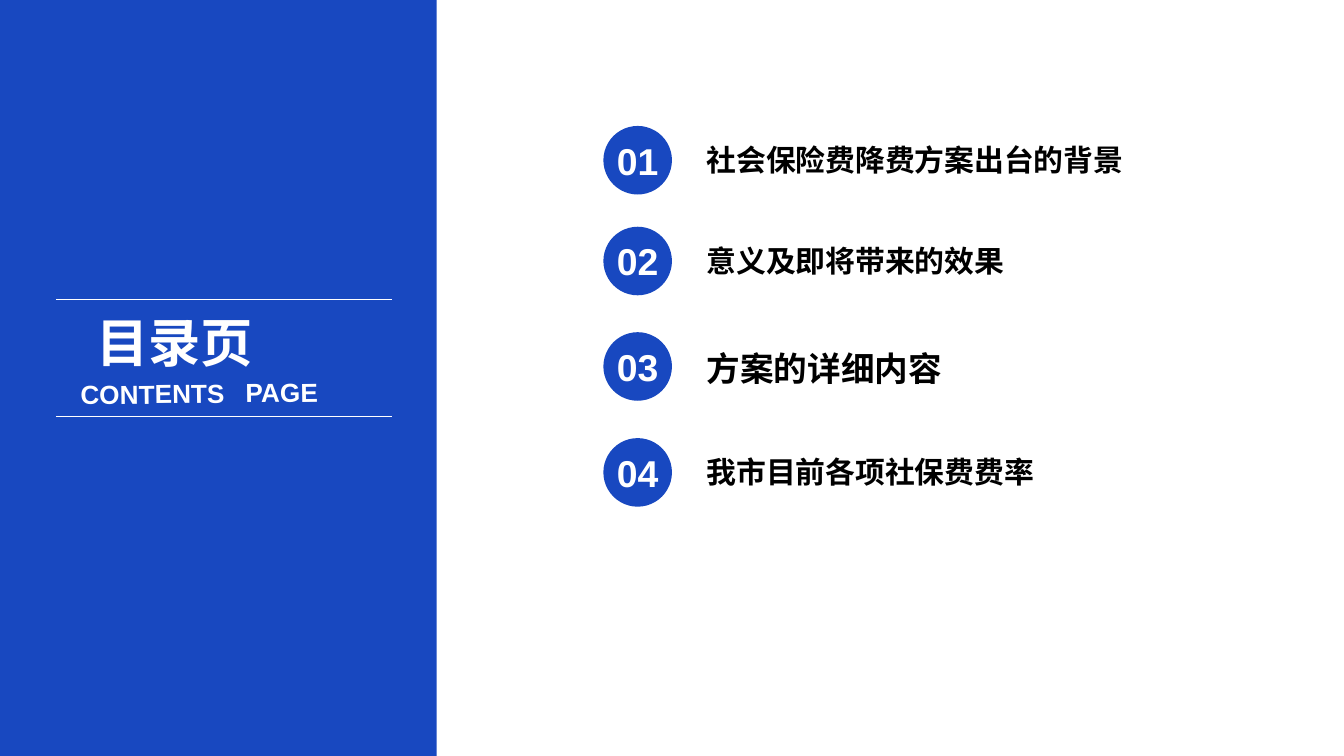
from pptx import Presentation
from pptx import util as u
from pptx.dml.color import RGBColor
from pptx.enum import shapes, text
from pptx.oxml.ns import qn
from lxml import etree

COLORS = {"blue": "1848C0", "white": "FFFFFF", "black": "000000"}
CJK, LATIN = "Noto Sans CJK SC", "Arial"
TITLE = "目录页"
SUBTITLE = "CONTENTS\tPAGE"
ENTRIES = [
    ("01", "社会保险费降费方案出台的背景", 16, 67.5),
    ("02", "意义及即将带来的效果", 16, 121.5),
    ("03", "方案的详细内容", 18, 178),
    ("04", "我市目前各项社保费费率", 16, 234.75),
]
RULE_TOPS = (160.5, 223)
PAGE_WIDTH, PAGE_HEIGHT = 720, 405
PANEL_WIDTH = 234
RULE_LEFT, RULE_RIGHT = 30, 210
CIRCLE_LEFT, CIRCLE_SIZE = 323.25, 36.75
LABEL_LEFT, LABEL_WIDTH = 371.5, 286.5
LABEL_DROP = 5
PAGE_WORD_TAB = 88.5


def color(name):
    return RGBColor.from_string(COLORS[name])


def points(*values):
    return [u.Pt(value) for value in values]


def write(box, words, size, font, ink, align=text.PP_ALIGN.LEFT,
          anchor=text.MSO_ANCHOR.TOP):
    frame = box.text_frame
    frame.text = words
    frame.word_wrap = True
    frame.auto_size = text.MSO_AUTO_SIZE.NONE
    frame.vertical_anchor = anchor
    para = frame.paragraphs[0]
    para.alignment = align
    para.font.size = u.Pt(size)
    para.font.bold = True
    para.font.name = font
    para.font.color.rgb = color(ink)
    defaults = para._p.pPr.find(qn("a:defRPr"))
    etree.SubElement(defaults, qn("a:ea")).set("typeface", font)
    return para


def add_solid(page, kind, *bounds):
    shape = page.shapes.add_shape(kind, *points(*bounds))
    shape.shadow.inherit = False
    shape.fill.solid()
    shape.fill.fore_color.rgb = color("blue")
    shape.line.fill.background()
    return shape


def add_rule(page, top):
    rule = page.shapes.add_connector(
        shapes.MSO_CONNECTOR.STRAIGHT, *points(RULE_LEFT, top, RULE_RIGHT, top))
    rule.line.color.rgb = color("white")
    rule.line.width = u.Pt(0.5)
    etree.SubElement(rule._element.spPr, qn("a:effectLst"))


def add_heading(page):
    title = page.shapes.title
    title.left, title.top, title.width, title.height = points(44.5, 162.75, 105, 41)
    write(title, TITLE, 28, CJK, "white")

    subtitle = page.shapes.add_textbox(*points(36, 196, 176.5, 28.5))
    subtitle.rotation = 359.3
    para = write(subtitle, SUBTITLE, 14, LATIN, "white",
                 anchor=text.MSO_ANCHOR.MIDDLE)
    tabs = etree.Element(qn("a:tabLst"))
    etree.SubElement(tabs, qn("a:tab"), pos=str(u.Pt(PAGE_WORD_TAB)), algn="l")
    para._p.pPr.insert(0, tabs)


def add_entry(page, number, label, size, top):
    circle = add_solid(page, shapes.MSO_SHAPE.OVAL,
                       CIRCLE_LEFT, top, CIRCLE_SIZE, CIRCLE_SIZE)
    frame = circle.text_frame
    frame.margin_left = frame.margin_right = 0
    frame.margin_top = frame.margin_bottom = 0
    write(circle, number, 20, LATIN, "white",
          text.PP_ALIGN.CENTER, text.MSO_ANCHOR.MIDDLE)
    box = page.shapes.add_textbox(
        *points(LABEL_LEFT, top + LABEL_DROP, LABEL_WIDTH, size * 1.2 + 7.5))
    write(box, label, size, CJK, "black")


def main():
    deck = Presentation()
    deck.slide_width, deck.slide_height = points(PAGE_WIDTH, PAGE_HEIGHT)
    page = deck.slides.add_slide(deck.slide_layouts[5])
    panel = add_solid(page, shapes.MSO_SHAPE.RECTANGLE,
                      0, 0, PANEL_WIDTH, PAGE_HEIGHT)
    page.shapes.title._element.addprevious(panel._element)
    for top in RULE_TOPS:
        add_rule(page, top)
    add_heading(page)
    for entry in ENTRIES:
        add_entry(page, *entry)
    deck.save("out.pptx")


if __name__ == "__main__":
    main()
